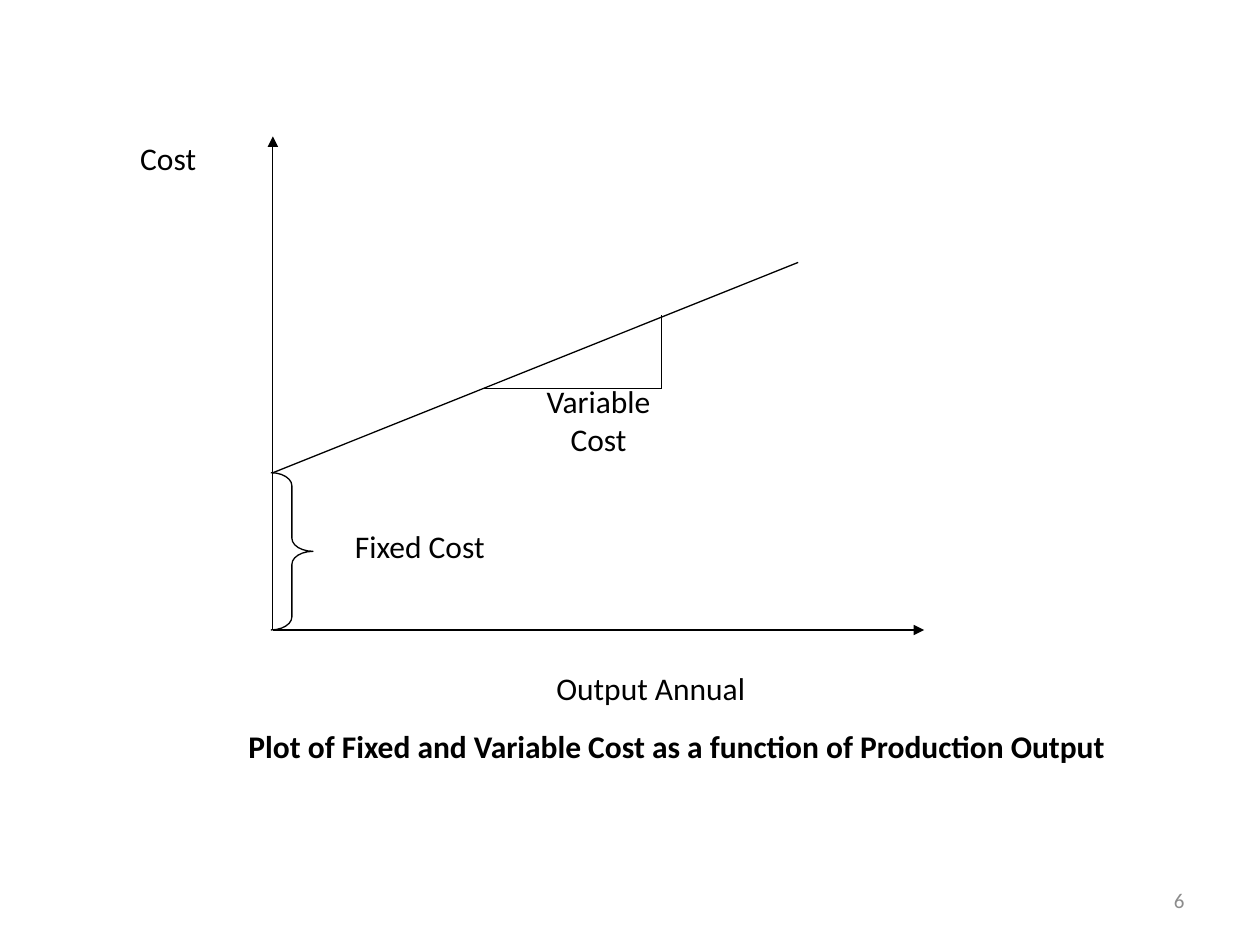
from lxml import etree
from pptx import Presentation
from pptx.dml.color import RGBColor
from pptx.enum.shapes import MSO_CONNECTOR, MSO_SHAPE
from pptx.enum.text import MSO_ANCHOR, PP_ALIGN
from pptx.oxml.ns import qn
from pptx.util import Cm, Pt

STRAIGHT = MSO_CONNECTOR.STRAIGHT
RIGHT_BRACE = MSO_SHAPE.RIGHT_BRACE
MIDDLE = MSO_ANCHOR.MIDDLE
CENTER, RIGHT = PP_ALIGN.CENTER, PP_ALIGN.RIGHT

COLORS = {"ink": "000000", "number": "8C8C8C"}
FONT = "Calibri"
LINE_WIDTH = Pt(0.75)

# Chart points, in centimetres
ORIGIN = (5.5, 12.7)
FIXED_LEVEL = (5.5, 9.53)
CORNER = (13.34, 7.83)

# Lines: start, end, arrowhead at the end
LINES = [
    (ORIGIN, (5.5, 2.75), True),           # cost axis
    (ORIGIN, (18.63, 12.7), True),         # output axis
    (FIXED_LEVEL, (16.09, 5.29), False),   # total cost
    ((9.74, 7.83), CORNER, False),         # slope triangle
    (CORNER, (13.34, 6.35), False),
]
BRACE = (5.46, 9.53, 0.85, 3.17)

# Labels: text, (left, top, width, height), bold
LABELS = [
    ("Cost", (2.12, 2.75, 2.54, 0.85), False),
    ("Variable Cost", (10.16, 8.04, 3.81, 0.85), False),
    ("Fixed Cost", (6.56, 10.58, 3.81, 0.85), False),
    ("Output Annual", (10.58, 13.55, 5.08, 0.64), False),
    ("Plot of Fixed and Variable Cost as a function of Production Output",
     (4.23, 14.61, 18.84, 0.85), True),
]
PAGE_NUMBER = ("6", (18.2, 17.65, 5.93, 1.01))


def add_line(slide, start, end, arrow):
    line = slide.shapes.add_connector(STRAIGHT, *map(Cm, start + end))
    line.line.color.rgb = RGBColor.from_string(COLORS["ink"])
    line.line.width = LINE_WIDTH
    properties = line._element.spPr
    if arrow:
        outline = properties.find(qn("a:ln"))
        etree.SubElement(outline, qn("a:tailEnd"), type="triangle")
    etree.SubElement(properties, qn("a:effectLst"))


def add_text(slide, text, box, size=18, color="ink", bold=False,
             align=CENTER, wrap=False):
    text_frame = slide.shapes.add_textbox(*map(Cm, box)).text_frame
    text_frame.word_wrap = wrap
    text_frame.vertical_anchor = MIDDLE
    text_frame.text = text
    paragraph = text_frame.paragraphs[0]
    paragraph.alignment = align
    font = paragraph.runs[0].font
    font.name, font.size, font.bold = FONT, Pt(size), bold
    font.color.rgb = RGBColor.from_string(COLORS[color])


def main():
    presentation = Presentation()
    presentation.slide_width, presentation.slide_height = Cm(25.4), Cm(19.05)
    slide = presentation.slides.add_slide(presentation.slide_layouts[6])

    # Axes, cost line and slope triangle
    for start, end, arrow in LINES:
        add_line(slide, start, end, arrow)

    # Brace over the fixed cost
    brace = slide.shapes.add_shape(RIGHT_BRACE, *map(Cm, BRACE))
    brace.adjustments[0] = 0.31
    brace.shadow.inherit = False
    brace.fill.background()
    brace.line.color.rgb = RGBColor.from_string(COLORS["ink"])
    brace.line.width = LINE_WIDTH

    # Labels, caption and page number
    for text, box, bold in LABELS:
        add_text(slide, text, box, bold=bold)
    add_text(slide, *PAGE_NUMBER, size=12, color="number", align=RIGHT, wrap=True)

    presentation.save("out.pptx")


if __name__ == "__main__":
    main()
